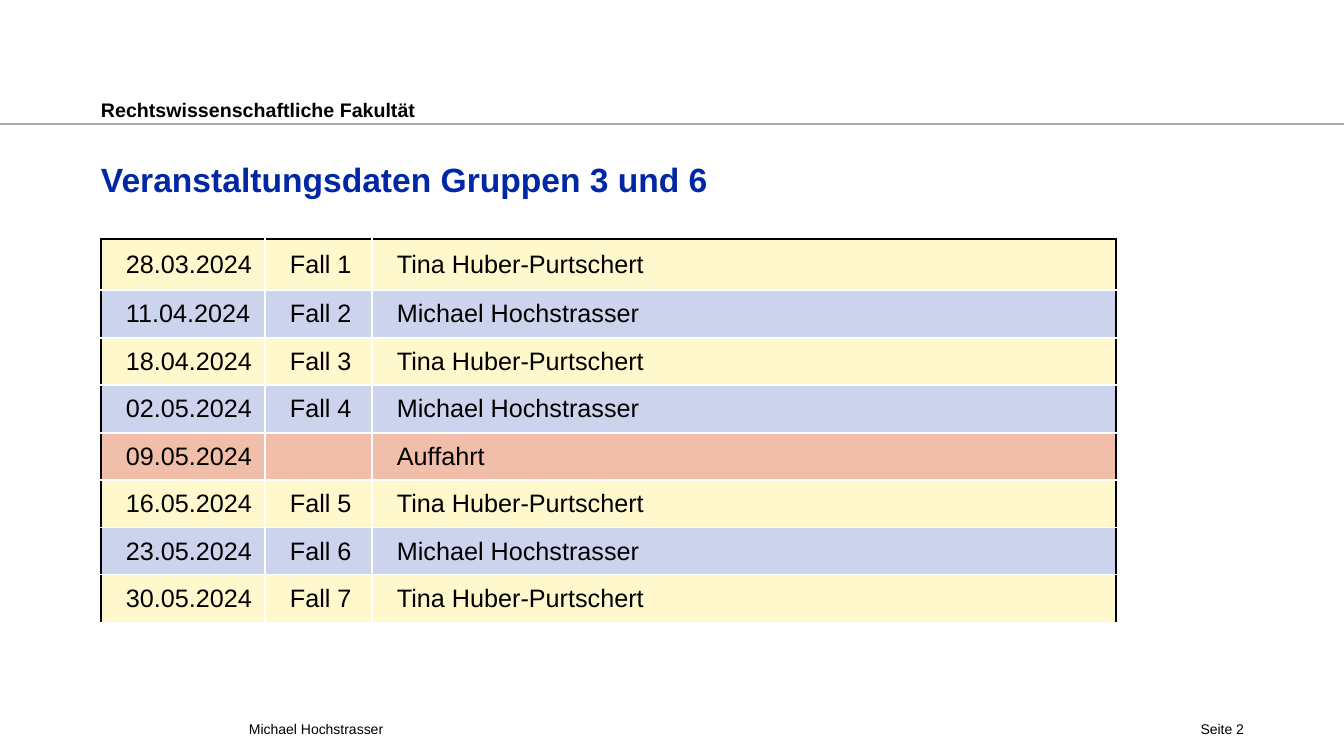
from lxml import etree
from pptx import Presentation
from pptx.dml.color import RGBColor
from pptx.enum.shapes import MSO_CONNECTOR
from pptx.enum.text import MSO_ANCHOR, MSO_AUTO_SIZE, PP_ALIGN
from pptx.oxml.ns import qn
from pptx.util import Pt

PX = 914400 / 100.8
FONT = "Arial"
BLACK = RGBColor(0x00, 0x00, 0x00)
WHITE = RGBColor(0xFF, 0xFF, 0xFF)
BLUE = RGBColor(0x00, 0x28, 0xA5)
GREY = RGBColor(0xA3, 0xAD, 0xB7)
CREAM = RGBColor(0xFF, 0xF8, 0xCC)
LILAC = RGBColor(0xCC, 0xD4, 0xED)
CORAL = RGBColor(0xF1, 0xBF, 0xA9)
STRAIGHT = MSO_CONNECTOR.STRAIGHT
TOP, MIDDLE = MSO_ANCHOR.TOP, MSO_ANCHOR.MIDDLE
LEFT, RIGHT = PP_ALIGN.LEFT, PP_ALIGN.RIGHT
NO_FIT = MSO_AUTO_SIZE.NONE

TINA = "Tina Huber-Purtschert"
MICHAEL = "Michael Hochstrasser"
DATES = [
    ("28.03.2024", "Fall 1", TINA),
    ("11.04.2024", "Fall 2", MICHAEL),
    ("18.04.2024", "Fall 3", TINA),
    ("02.05.2024", "Fall 4", MICHAEL),
    ("09.05.2024", "", "Auffahrt"),
    ("16.05.2024", "Fall 5", TINA),
    ("23.05.2024", "Fall 6", MICHAEL),
    ("30.05.2024", "Fall 7", TINA),
]
FILLS = {TINA: CREAM, MICHAEL: LILAC, "Auffahrt": CORAL}


def emu(*px):
    return [round(n * PX) for n in px]


class Deck:
    def __init__(self):
        self.prs = Presentation()
        self.prs.slide_width, self.prs.slide_height = emu(1344, 756)
        self.slide = self.prs.slides.add_slide(self.prs.slide_layouts[5])

    def style(self, para, size, color=BLACK, bold=False):
        for run in para.runs:
            font = run.font
            font.name, font.size, font.bold = FONT, Pt(size), bold
            font.color.rgb = color

    def label(self, shape, text, size, color=BLACK, bold=False, align=LEFT, inset=0):
        frame = shape.text_frame
        frame.text = text
        frame.word_wrap, frame.auto_size = True, NO_FIT
        frame.vertical_anchor = TOP
        frame.margin_left = frame.margin_right = frame.margin_bottom = 0
        frame.margin_top = emu(inset)[0]
        para = frame.paragraphs[0]
        para.alignment = align
        self.style(para, size, color, bold)

    def title(self, box, text):
        shape = self.slide.shapes.title
        shape.left, shape.top, shape.width, shape.height = emu(*box)
        self.label(shape, text, 24, BLUE, True, inset=4)

    def text(self, box, text, size, **look):
        self.label(self.slide.shapes.add_textbox(*emu(*box)), text, size, **look)

    def line(self, ends, color, width):
        rule = self.slide.shapes.add_connector(STRAIGHT, *emu(*ends))
        rule.line.color.rgb, rule.line.width = color, Pt(width)
        etree.SubElement(rule._element.spPr, qn("a:effectLst"))

    def border(self, cell, side, color):
        edge = etree.SubElement(cell._tc.get_or_add_tcPr(), qn("a:ln" + side), w=str(Pt(1)))
        fill = etree.SubElement(edge, qn("a:solidFill"))
        etree.SubElement(fill, qn("a:srgbClr"), val=str(color))

    def cell(self, cell, text, fill, dark):
        for side in "LRTB":
            self.border(cell, side, BLACK if side in dark else WHITE)
        cell.fill.solid()
        cell.fill.fore_color.rgb = fill
        cell.vertical_anchor = MIDDLE
        cell.margin_left = cell.margin_right = emu(5)[0]
        cell.margin_top = cell.margin_bottom = 0
        if text:
            cell.text = text
            para = cell.text_frame.paragraphs[0]
            para._p.get_or_add_pPr().set("marL", str(emu(20)[0]))
            self.style(para, 18)

    def table(self, left, top, widths, heights, rows):
        box = emu(left, top, sum(widths), sum(heights))
        grid = self.slide.shapes.add_table(len(rows), len(widths), *box).table
        grid.first_row = grid.horz_banding = False
        for col, width in zip(grid.columns, emu(*widths)):
            col.width = width
        for row, height in zip(grid.rows, emu(*heights)):
            row.height = height
        last = len(widths) - 1
        for r, row in enumerate(rows):
            for c, text in enumerate(row):
                # Black outer edges, white inner ones
                dark = "L" * (c == 0) + "R" * (c == last) + "T" * (r == 0)
                self.cell(grid.cell(r, c), text, FILLS[row[-1]], dark)


def main():
    deck = Deck()

    # Header
    deck.line((0, 124, 1344, 124), GREY, 1.25)
    deck.text((101, 94, 808, 25), "Rechtswissenschaftliche Fakultät", 14, bold=True, inset=4)

    # Footer
    deck.text((249, 720, 772, 24), MICHAEL, 10)
    deck.text((1152, 720, 92, 24), "Seite 2", 10, align=RIGHT)

    # Title and dates
    deck.title((101, 155, 1143, 88), "Veranstaltungsdaten Gruppen 3 und 6")
    deck.table(101, 239, [164, 107, 744], [51] + [48, 47] * 3 + [48], DATES)

    deck.prs.save("out.pptx")


if __name__ == "__main__":
    main()
